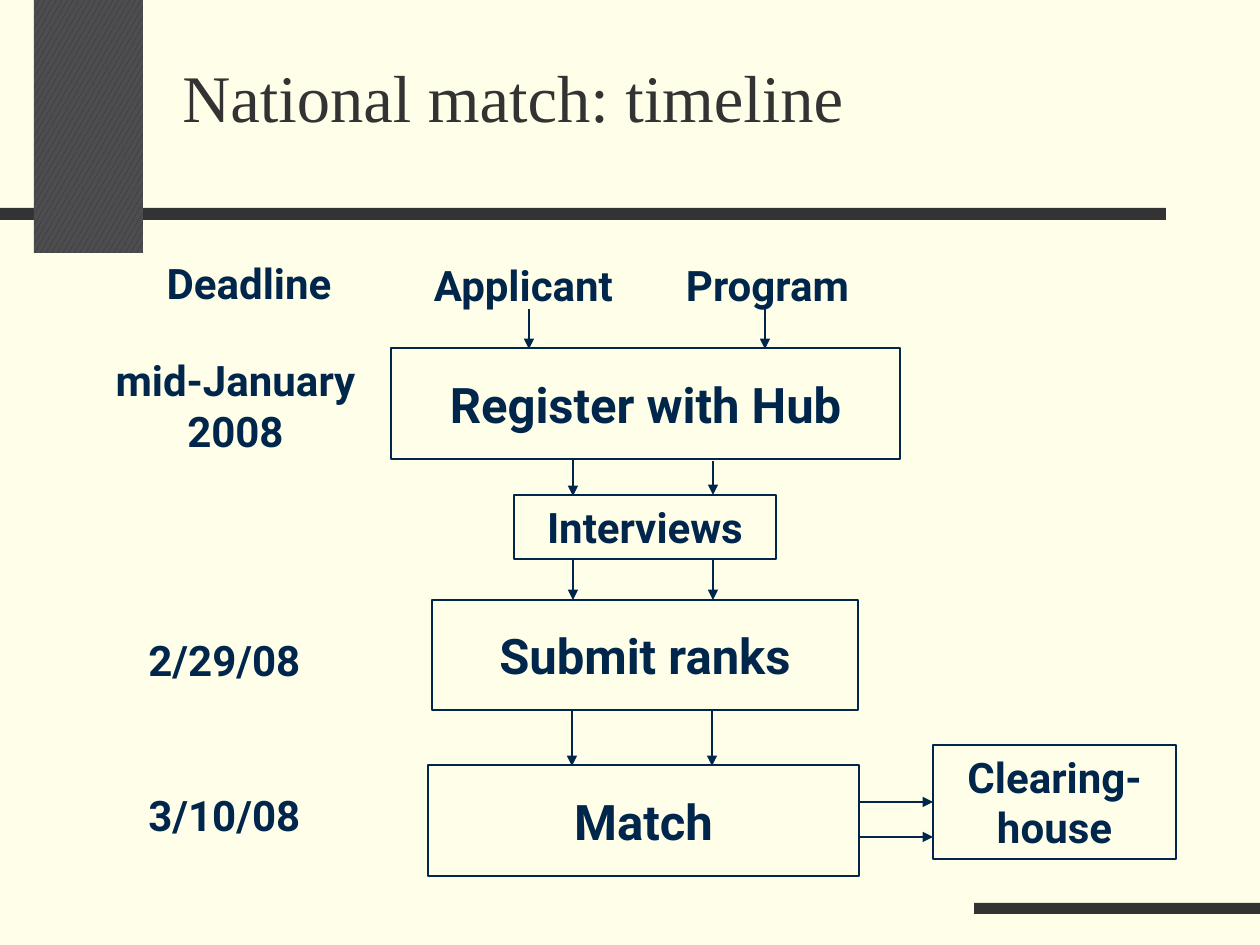
from pptx import Presentation, util as u
from pptx.dml.color import RGBColor
from pptx.enum import dml, shapes, text
from pptx.oxml.ns import qn
from lxml import etree

PX = 914400 / 126
THEME = dict(page="FFFFE9", bar="333333", ink="00264C", dots="262D4C", grey="4D4D4D",
             head="Times New Roman", body="Roboto", title=38, big=28, mid=24)
LEFT, MID = text.PP_ALIGN.LEFT, text.PP_ALIGN.CENTER


def size(*px):
    return [u.Emu(round(n * PX)) for n in px]


def write(shape, words, pts, align=MID, face="body", ink="ink", bold=True, pad=6, hold="TOP"):
    frame = shape.text_frame
    form = dict(word_wrap=True, vertical_anchor=getattr(text.MSO_ANCHOR, hold),
                margin_top=size(pad)[0], margin_bottom=size(pad)[0])
    for key, val in form.items():
        setattr(frame, key, val)
    para = frame.paragraphs[0]
    para.alignment = align
    run = para.add_run()
    run.text = words
    for key, val in dict(name=THEME[face], size=u.Pt(THEME[pts]), bold=bold).items():
        setattr(run.font, key, val)
    run.font.color.rgb = RGBColor.from_string(THEME[ink])


deck = Presentation()
deck.slide_width, deck.slide_height = size(1260, 945)
slide = deck.slides.add_slide(deck.slide_layouts[6])
slide.background.fill.solid()
slide.background.fill.fore_color.rgb = RGBColor.from_string(THEME["page"])
parts = slide.shapes
RECT = shapes.MSO_SHAPE.RECTANGLE

for spot in [(0, 208, 1166, 12), (34, 0, 109, 253), (974, 903, 286, 11)]:
    bar = parts.add_shape(RECT, *size(*spot))
    bar.shadow.inherit = False
    bar.line.fill.background()
    if spot[1] == 0:
        bar.fill.patterned()
        bar.fill.pattern = dml.MSO_PATTERN.LARGE_CONFETTI
        bar.fill.fore_color.rgb = RGBColor.from_string(THEME["dots"])
        bar.fill.back_color.rgb = RGBColor.from_string(THEME["grey"])
    else:
        bar.fill.solid()
        bar.fill.fore_color.rgb = RGBColor.from_string(THEME["bar"])

title = parts.add_textbox(*size(170, 50, 1027, 145))
write(title, "National match: timeline", "title", LEFT, "head", "bar", False)

labels = [
    ("Applicant", (387, 254, 273, 63), MID),
    ("Program", (631, 254, 273, 63), MID),
    ("Deadline", (136, 252, 226, 63), MID),
    ("mid-January 2008", (83, 349, 305, 113), MID),
    ("2/29/08", (136, 629, 243, 63), LEFT),
    ("3/10/08", (136, 784, 237, 63), LEFT),
]
for words, spot, align in labels:
    write(parts.add_textbox(*size(*spot)), words, "mid", align)

steps = [
    ("Register with Hub", (391, 348, 509, 111), "big", 25, 1),
    ("Interviews", (514, 495, 262, 64), "mid", 6, 0.75),
    ("Submit ranks", (432, 600, 426, 110), "big", 25, 0.75),
    ("Match", (428, 765, 431, 111), "big", 25, 0.75),
    ("Clearing-house", (933, 745, 243, 114), "mid", 6, 0.75),
]
boxes = {}
for words, spot, pts, pad, wide in steps:
    box = parts.add_shape(RECT, *size(*spot))
    box.shadow.inherit = False
    box.fill.solid()
    box.fill.fore_color.rgb = RGBColor.from_string(THEME["page"])
    box.line.color.rgb = RGBColor.from_string(THEME["ink"])
    box.line.width = u.Pt(wide)
    write(box, words, pts, pad=pad, hold="MIDDLE")
    boxes[words] = box

arrows = [
    (529, 309, 529, 349), (765, 309, 765, 349),
    (573, 460, 573, 496), (713, 461, 713, 495),
    (573, 558, 573, 600), (713, 559, 713, 600),
    (572, 709, 572, 766), (712, 709, 712, 766),
    (859, 802, 933, 802), (859, 837, 933, 837),
]
for ends in arrows:
    link = parts.add_connector(shapes.MSO_CONNECTOR.STRAIGHT, *size(*ends))
    if ends[3] == 802:
        link.end_connect(boxes["Clearing-house"], 1)
    link.line.color.rgb = RGBColor.from_string(THEME["ink"])
    link.line.width = u.Pt(0.75)
    etree.SubElement(link.line._get_or_add_ln(), qn("a:tailEnd"), type="triangle")
    etree.SubElement(link._element.spPr, qn("a:effectLst"))

deck.save("out.pptx")
